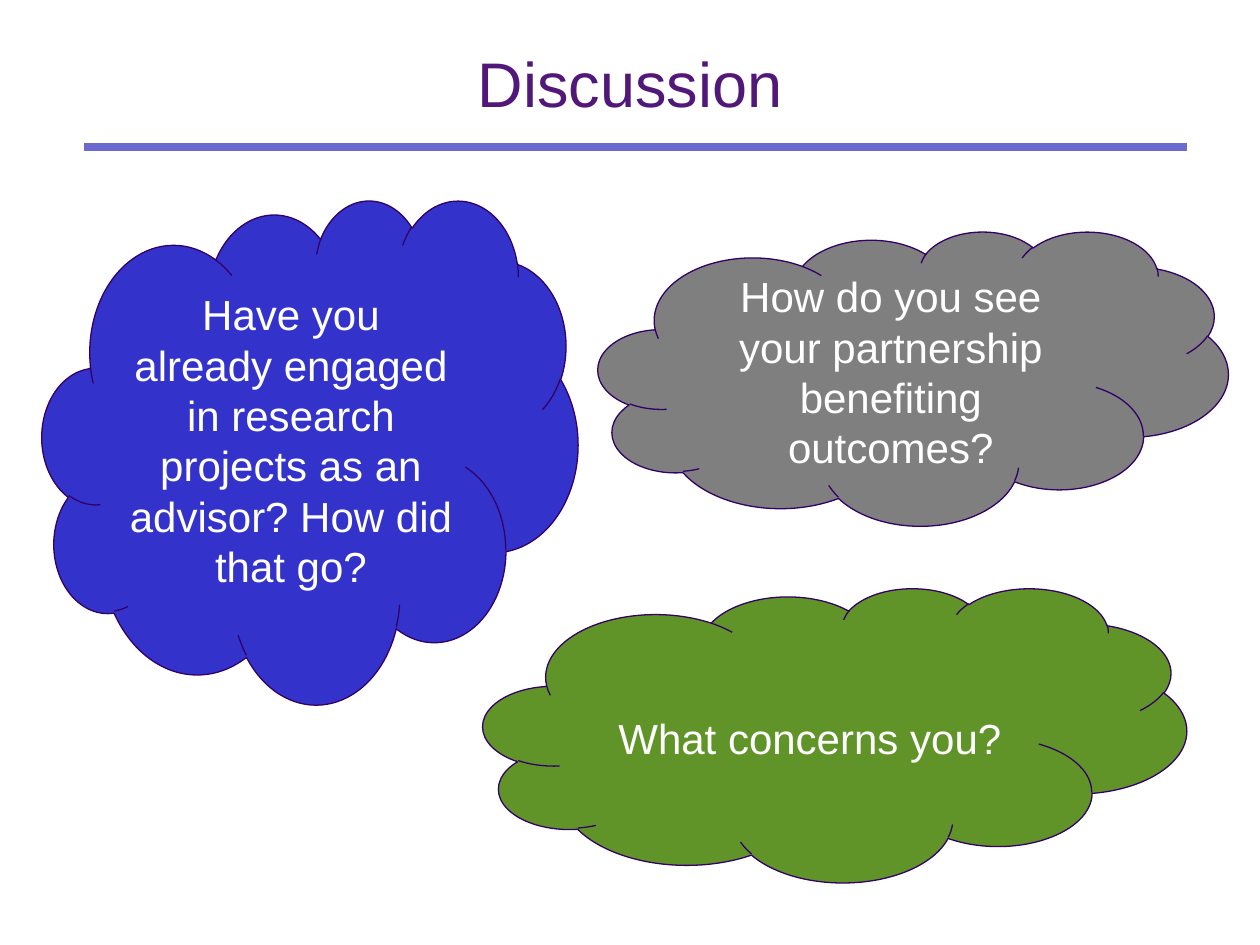
from lxml import etree
from pptx import Presentation
from pptx.dml.color import RGBColor
from pptx.enum.shapes import MSO_CONNECTOR, MSO_SHAPE
from pptx.enum.text import MSO_ANCHOR, PP_ALIGN
from pptx.oxml.ns import qn
from pptx.util import Cm, Pt

CLOUD = MSO_SHAPE.CLOUD
STRAIGHT = MSO_CONNECTOR.STRAIGHT
CENTER = PP_ALIGN.CENTER
TOP, MIDDLE = MSO_ANCHOR.TOP, MSO_ANCHOR.MIDDLE

FONT = "Arial"
COLORS = {
    "title": "511879",
    "rule": "6B6BCF",
    "outline": "330066",
    "text": "FFFFFF",
    "green": "619428",
    "blue": "3333CC",
    "gray": "7F7F7F",
}

TITLE = "Discussion"
# question, fill, (left, top, width, height) in cm, top inset in cm
CLOUDS = [
    ("What concerns you?", "green", (9.74, 11.85, 14.18, 5.93), 0.53),
    ("Have you already engaged in research projects as an advisor? How did that go?",
     "blue", (0.85, 4.02, 10.8, 10.16), 0.13),
    ("How do you see your partnership benefiting outcomes?",
     "gray", (12.06, 4.66, 12.7, 5.93), 0.13),
]


def color(name):
    return RGBColor.from_string(COLORS[name])


def write(shape, text, size, color_name, anchor, top_inset):
    frame = shape.text_frame
    frame.word_wrap = True
    frame.vertical_anchor = anchor
    frame.margin_top = Cm(top_inset)
    para = frame.paragraphs[0]
    para.text = text
    para.alignment = CENTER
    para.space_before = Pt(0)
    para.font.name = FONT
    para.font.size = Pt(size)
    para.font.color.rgb = color(color_name)
    return para


def add_title(page):
    title = page.shapes.title
    title.left, title.top, title.width, title.height = map(Cm, (1.27, 0.64, 22.86, 3.18))
    write(title, TITLE, 36, "title", TOP, 0.25)


def add_rule(page):
    rule = page.shapes.add_connector(STRAIGHT, Cm(1.7), Cm(2.97), Cm(23.93), Cm(2.97))
    rule.line.color.rgb = color("rule")
    rule.line.width = Pt(4.5)
    etree.SubElement(rule._element.spPr, qn("a:effectLst"))


def add_cloud(page, question, fill, place, top_inset):
    cloud = page.shapes.add_shape(CLOUD, *map(Cm, place))
    cloud.shadow.inherit = False
    cloud.fill.solid()
    cloud.fill.fore_color.rgb = color(fill)
    cloud.line.color.rgb = color("outline")
    cloud.line.width = Pt(0.75)
    para = write(cloud, question, 24, "text", MIDDLE, top_inset)
    para.line_spacing = Pt(28.8)


def main():
    deck = Presentation()
    deck.slide_width, deck.slide_height = Cm(25.4), Cm(19.05)
    page = deck.slides.add_slide(deck.slide_layouts[5])
    add_title(page)
    add_rule(page)
    for cloud in CLOUDS:
        add_cloud(page, *cloud)
    deck.save("out.pptx")


if __name__ == "__main__":
    main()
